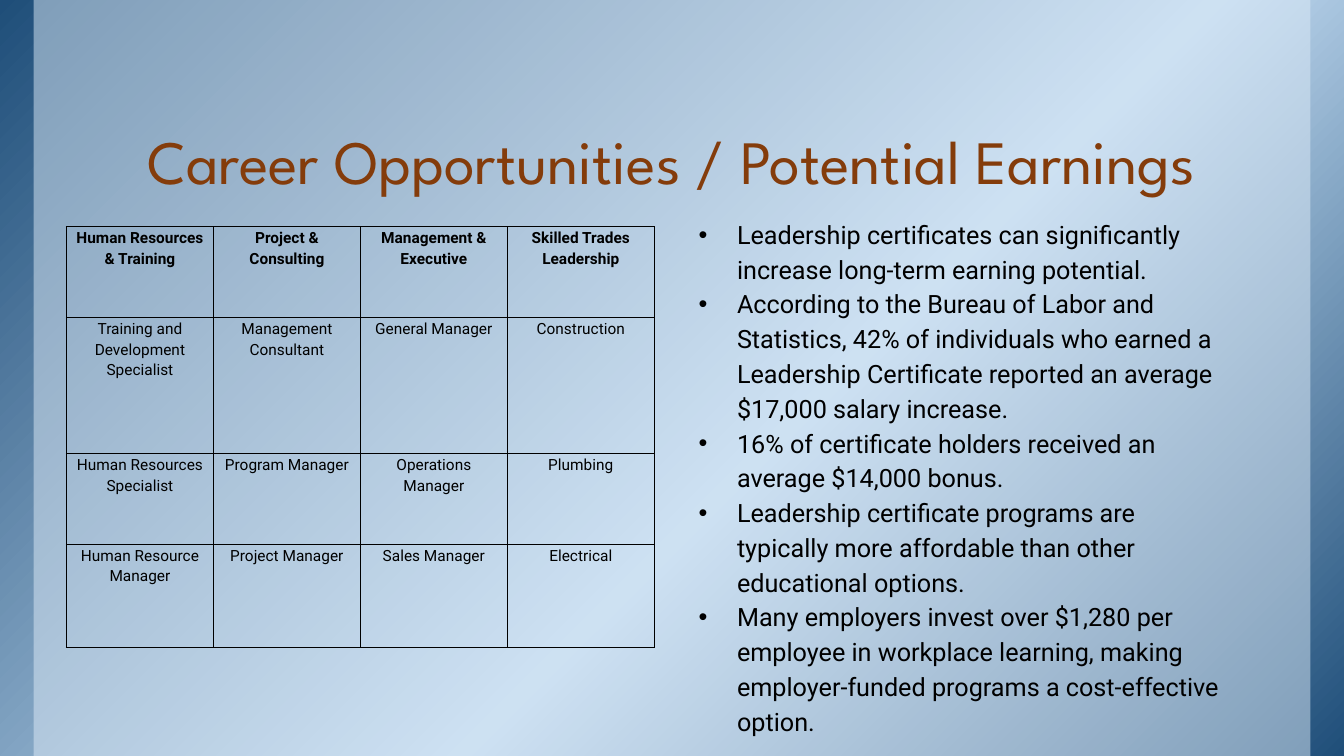
from copy import deepcopy

from lxml.etree import SubElement
from pptx import Presentation
from pptx.dml.color import RGBColor
from pptx.enum.shapes import MSO_SHAPE
from pptx.enum.text import MSO_ANCHOR, MSO_AUTO_SIZE, PP_ALIGN
from pptx.oxml import parse_xml
from pptx.oxml.ns import nsdecls, qn
from pptx.util import Inches, Pt

W, H = 13.33, 7.5
BROWN, BLACK = "843C0B", "000000"
NAVY, SKY, PALE = "1F4E79", "BDD7EE", "DEEBF7"

CAREERS = [
    ["Human Resources & Training", "Project & Consulting",
     "Management & Executive", "Skilled Trades Leadership"],
    ["Training and Development Specialist", "Management Consultant",
     "General Manager", "Construction"],
    ["Human Resources Specialist", "Program Manager",
     "Operations Manager", "Plumbing"],
    ["Human Resource Manager", "Project Manager",
     "Sales Manager", "Electrical"],
]
ROW_HEIGHTS = [0.9, 1.35, 0.9, 1.02]
EARNINGS = [
    "Leadership certificates can significantly increase long-term earning potential.",
    "According to the Bureau of Labor and Statistics, 42% of individuals who earned "
    "a Leadership Certificate reported an average $17,000 salary increase.",
    "16% of certificate holders received an average $14,000 bonus.",
    "Leadership certificate programs are typically more affordable than other "
    "educational options.",
    "Many employers invest over $1,280 per employee in workplace learning, making "
    "employer-funded programs a cost-effective option.",
]


def color(value):
    return RGBColor.from_string(value)


def style(p, font, size, hue, bold=False):
    for r in p.runs:
        r.font.name, r.font.size, r.font.bold = font, Pt(size), bold
        r.font.color.rgb = color(hue)


def place(sp, box):
    sp.left, sp.top, sp.width, sp.height = [Inches(v) for v in box]


def set_insets(target, x, y):
    target.margin_left = target.margin_right = Inches(x)
    target.margin_top = target.margin_bottom = Inches(y)


def add_panel(s, box, depth):
    """Add a plain rectangle, placed behind the placeholders."""
    sp = s.shapes.add_shape(MSO_SHAPE.RECTANGLE, *[Inches(v) for v in box])
    sp.shadow.inherit = False
    sp.line.fill.background()
    s.shapes.element.insert(2 + depth, sp.element)
    return sp


def add_backdrop(s, box):
    left, top, width, height = box
    # Diagonal gradient over the whole slide
    fill = add_panel(s, box, 0).fill
    fill.gradient()
    fill.gradient_angle = 315
    first = fill._fill._gradFill.find(qn("a:gsLst"))[0]
    first.addnext(deepcopy(first))
    for stop, (share, hue) in zip(fill.gradient_stops,
                                  [(0, NAVY), (0.58, SKY), (1, NAVY)]):
        stop.position = share
        stop.color.rgb = color(hue)
    # Half-transparent sheet between the side edges
    edge = width * 0.025
    sheet = add_panel(s, (left + edge, top, width - 2 * edge, height), 1)
    sheet.fill.solid()
    sheet.fill.fore_color.rgb = color(PALE)
    hue = sheet.fill._xPr.find(qn("a:solidFill"))[0]
    SubElement(hue, qn("a:alpha"), val="50000")


def fill_title(sp, box, text):
    place(sp, box)
    tf = sp.text_frame
    tf.text = text
    tf.word_wrap = True
    tf.vertical_anchor = MSO_ANCHOR.BOTTOM
    set_insets(tf, 0.13, 0.07)
    p = tf.paragraphs[0]
    p.alignment, p.line_spacing = PP_ALIGN.CENTER, 0.85
    style(p, "League Spartan", 44, BROWN)


def add_borders(cell):
    tcPr = cell._tc.get_or_add_tcPr()
    for i, side in enumerate(["lnL", "lnR", "lnT", "lnB"]):
        tcPr.insert(i, parse_xml(
            f'<a:{side} {nsdecls("a")} w="12700"><a:solidFill>'
            f'<a:srgbClr val="{BLACK}"/></a:solidFill></a:{side}>'))


def add_career_table(s, box):
    table = s.shapes.add_table(len(CAREERS), len(CAREERS[0]),
                               *[Inches(v) for v in box]).table
    table.first_row = table.horz_banding = False
    for row, height in zip(table.rows, ROW_HEIGHTS):
        row.height = Inches(height)
    for i, texts in enumerate(CAREERS):
        for j, text in enumerate(texts):
            cell = table.cell(i, j)
            cell.text = text
            cell.fill.background()
            add_borders(cell)
            set_insets(cell, 0.07, 0)
            p = cell.text_frame.paragraphs[0]
            p.alignment, p.line_spacing = PP_ALIGN.CENTER, 1.15
            p.space_after = Pt(10)
            style(p, "Roboto", 11, BLACK, bold=i == 0)


def add_bullet(p):
    pPr = p._p.get_or_add_pPr()
    pPr.set("marL", str(Inches(0.38)))
    pPr.set("indent", str(-Inches(0.38)))
    SubElement(pPr, qn("a:buFont"), typeface="Arial")
    SubElement(pPr, qn("a:buChar"), char="•")
    tabs = SubElement(pPr, qn("a:tabLst"))
    SubElement(tabs, qn("a:tab"), pos=str(Inches(0.25)), algn="l")


def fill_earnings(sp, box):
    place(sp, box)
    tf = sp.text_frame
    tf.text = "\n".join(EARNINGS)
    tf.word_wrap = True
    tf.auto_size = MSO_AUTO_SIZE.SHAPE_TO_FIT_TEXT
    for p in tf.paragraphs:
        add_bullet(p)
        p.line_spacing, p.space_before, p.space_after = 1.15, Pt(0), Pt(0)
        style(p, "Roboto", 18, BLACK)
    p.space_after = Pt(10)


def main():
    prs = Presentation()
    prs.slide_width, prs.slide_height = Inches(W), Inches(H)
    s = prs.slides.add_slide(prs.slide_layouts[1])
    add_backdrop(s, (0, 0, W, H))
    fill_title(s.shapes.title, (W / 12, H / 15, W * 10 / 12, 1.53),
               "Career Opportunities / Potential Earnings")
    add_career_table(s, (0.66, H * 0.3, 5.83, sum(ROW_HEIGHTS)))
    fill_earnings(s.placeholders[1], (6.83, 2.08, 5.39, 5.85))
    prs.save("out.pptx")


if __name__ == "__main__":
    main()
